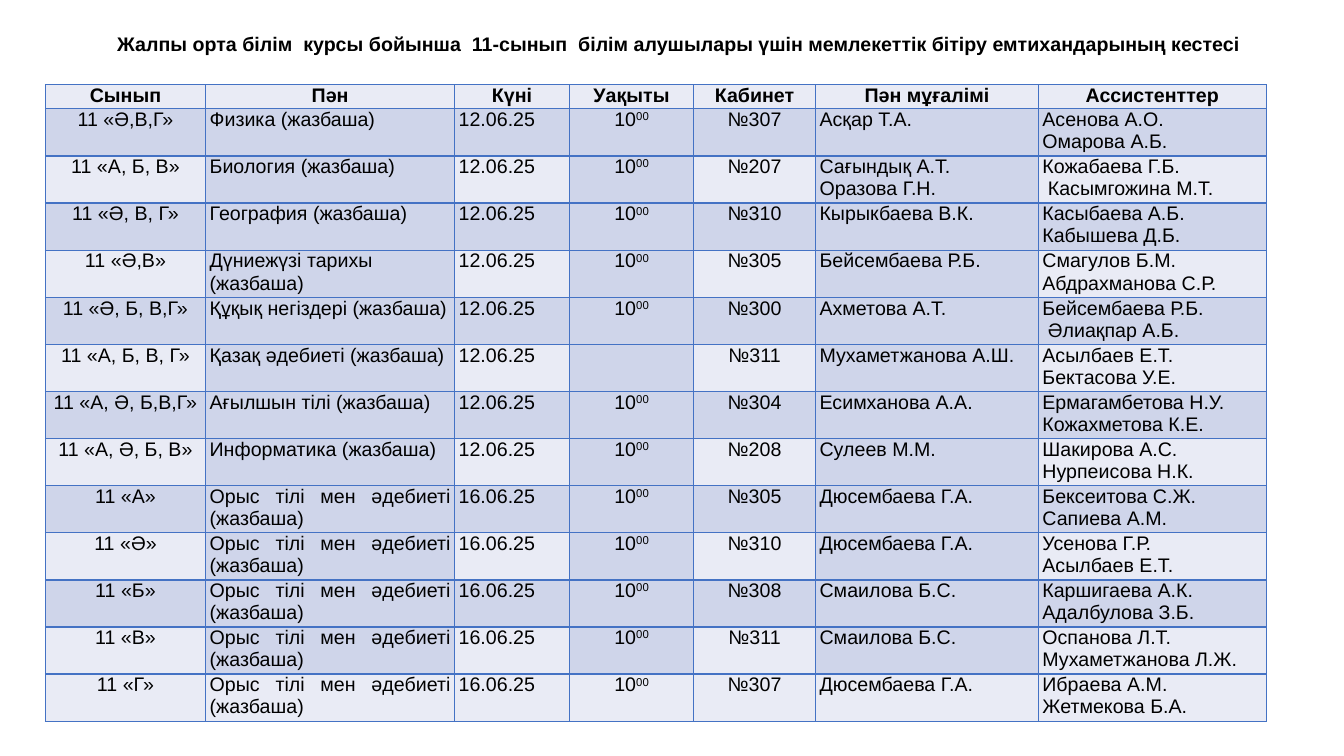
from dataclasses import dataclass

import pptx
import pptx.dml.color
import pptx.enum.text
import pptx.oxml
import pptx.oxml.ns
import pptx.util

Inches = pptx.util.Inches
Pt = pptx.util.Pt
Align = pptx.enum.text.PP_ALIGN
Anchor = pptx.enum.text.MSO_ANCHOR


@dataclass(frozen=True)
class Theme:
    font: str = "Arial"
    size: int = 14
    ink: str = "000000"
    light: str = "E9EBF5"
    band: str = "CFD5EA"
    rule: str = "4472C4"
    thin: int = 1
    thick: int = 2


THEME = Theme()
TITLE = ("Жалпы орта білім  курсы бойынша  11-сынып  білім алушылары үшін "
         "мемлекеттік бітіру емтихандарының кестесі")
HEADINGS = ("Сынып", "Пән", "Күні", "Уақыты", "Кабинет", "Пән мұғалімі", "Ассистенттер")
COLUMN_WIDTHS = (1.59, 2.47, 1.14, 1.23, 1.21, 2.21, 2.26)
COLUMN_ALIGNS = (Align.CENTER, Align.LEFT, Align.LEFT, Align.CENTER,
                 Align.CENTER, Align.LEFT, Align.LEFT)
TABLE_HEIGHT = 6.3
HEADING_HEIGHT = 0.24
FIRST_JUSTIFIED_EXAM = 8
FIRST_DAY, SECOND_DAY = "12.06.25", "16.06.25"
START = "10^00"
RUSSIAN = "Орыс тілі мен әдебиеті (жазбаша)"
EXAMS = (
    ("11 «Ә,В,Г»", "Физика (жазбаша)", FIRST_DAY, START, "№307",
     "Асқар Т.А.", "Асенова А.О.\nОмарова А.Б."),
    ("11 «А, Б, В»", "Биология (жазбаша)", FIRST_DAY, START, "№207",
     "Сағындық А.Т.\nОразова Г.Н.", "Кожабаева Г.Б.\n Касымгожина М.Т."),
    ("11 «Ә, В, Г»", "География (жазбаша)", FIRST_DAY, START, "№310",
     "Кырыкбаева В.К.", "Касыбаева А.Б.\nКабышева Д.Б."),
    ("11 «Ә,В»", "Дүниежүзі тарихы (жазбаша)", FIRST_DAY, START, "№305",
     "Бейсембаева Р.Б.", "Смагулов Б.М.\nАбдрахманова С.Р."),
    ("11 «Ә, Б, В,Г»", "Құқық негіздері (жазбаша)", FIRST_DAY, START, "№300",
     "Ахметова А.Т.", "Бейсембаева Р.Б.\n Әлиақпар А.Б."),
    ("11 «А, Б, В, Г»", "Қазақ әдебиеті (жазбаша)", FIRST_DAY, "", "№311",
     "Мухаметжанова А.Ш.", "Асылбаев Е.Т.\nБектасова У.Е."),
    ("11 «А, Ә, Б,В,Г»", "Ағылшын тілі (жазбаша)", FIRST_DAY, START, "№304",
     "Есимханова А.А.", "Ермагамбетова Н.У. Кожахметова К.Е."),
    ("11 «А, Ә, Б, В»", "Информатика (жазбаша)", FIRST_DAY, START, "№208",
     "Сулеев М.М.", "Шакирова А.С.\nНурпеисова Н.К."),
    ("11 «А»", RUSSIAN, SECOND_DAY, START, "№305",
     "Дюсембаева Г.А.", "Бексеитова С.Ж.\nСапиева А.М."),
    ("11 «Ә»", RUSSIAN, SECOND_DAY, START, "№310",
     "Дюсембаева Г.А.", "Усенова Г.Р.\nАсылбаев Е.Т."),
    ("11 «Б»", RUSSIAN, SECOND_DAY, START, "№308",
     "Смаилова Б.С.", "Каршигаева А.К.\nАдалбулова З.Б."),
    ("11 «В»", RUSSIAN, SECOND_DAY, START, "№311",
     "Смаилова Б.С.", "Оспанова Л.Т. Мухаметжанова Л.Ж."),
    ("11 «Г»", RUSSIAN, SECOND_DAY, START, "№307",
     "Дюсембаева Г.А.", "Ибраева А.М.\nЖетмекова Б.А."),
)


def color(value):
    return pptx.dml.color.RGBColor.from_string(value)


def write(frame, text, *, align=Align.LEFT, bold=False):
    frame.word_wrap = True
    for index, line in enumerate(text.split("\n")):
        paragraph = frame.add_paragraph() if index else frame.paragraphs[0]
        paragraph.alignment = align
        paragraph.font.size = Pt(THEME.size)
        for level, part in enumerate(line.split("^")):
            if not part:
                continue
            run = paragraph.add_run()
            run.text = part
            run.font.name = THEME.font
            run.font.size = Pt(THEME.size)
            run.font.bold = bold
            run.font.color.rgb = color(THEME.ink)
            if level:
                run._r.get_or_add_rPr().set("baseline", "30000")


def set_borders(cell, *, top, bottom):
    properties = cell._tc.get_or_add_tcPr()
    widths = {"lnL": THEME.thin, "lnR": THEME.thin, "lnT": top, "lnB": bottom}
    for side, width in widths.items():
        properties.append(pptx.oxml.parse_xml(
            f'<a:{side} {pptx.oxml.ns.nsdecls("a")} w="{Pt(width)}">'
            f'<a:solidFill><a:srgbClr val="{THEME.rule}"/></a:solidFill></a:{side}>'))


def cell_fill(row, column):
    if row in (0, len(EXAMS)):
        return THEME.light
    return THEME.band if row % 2 or column % 2 else THEME.light


def cell_align(row, column):
    if row == 0:
        return Align.CENTER
    if HEADINGS[column] == "Пән" and row >= FIRST_JUSTIFIED_EXAM:
        return Align.JUSTIFY
    return COLUMN_ALIGNS[column]


def fill_cell(cell, text, row, column):
    cell.margin_left = cell.margin_right = Inches(0.04)
    cell.margin_top = cell.margin_bottom = 0
    last = len(EXAMS)
    set_borders(cell,
                top=THEME.thick if row == last else THEME.thin,
                bottom=THEME.thick if row == last - 1 else THEME.thin)
    cell.fill.solid()
    cell.fill.fore_color.rgb = color(cell_fill(row, column))
    write(cell.text_frame, text, align=cell_align(row, column), bold=row == 0)


def add_title(slide):
    frame = slide.shapes.add_textbox(
        Inches(0.49), Inches(0.25), Inches(12.49), Inches(0.64)).text_frame
    frame.vertical_anchor = Anchor.TOP
    frame.margin_top = Inches(0.07)
    write(frame, TITLE, align=Align.CENTER, bold=True)


def add_schedule(slide):
    lines = (HEADINGS, *EXAMS)
    schedule = slide.shapes.add_table(
        len(lines), len(HEADINGS), Inches(0.45), Inches(0.84),
        Inches(sum(COLUMN_WIDTHS)), Inches(TABLE_HEIGHT)).table
    schedule.first_row = schedule.horz_banding = False
    for column, width in zip(schedule.columns, COLUMN_WIDTHS):
        column.width = Inches(width)
    exam_height = (TABLE_HEIGHT - HEADING_HEIGHT) / len(EXAMS)
    for row, line in enumerate(lines):
        schedule.rows[row].height = Inches(exam_height if row else HEADING_HEIGHT)
        for column, text in enumerate(line):
            fill_cell(schedule.cell(row, column), text, row, column)


def main():
    deck = pptx.Presentation()
    deck.slide_width, deck.slide_height = Inches(13.33), Inches(7.5)
    slide = deck.slides.add_slide(deck.slide_layouts[6])
    add_title(slide)
    add_schedule(slide)
    deck.save("out.pptx")


if __name__ == "__main__":
    main()
